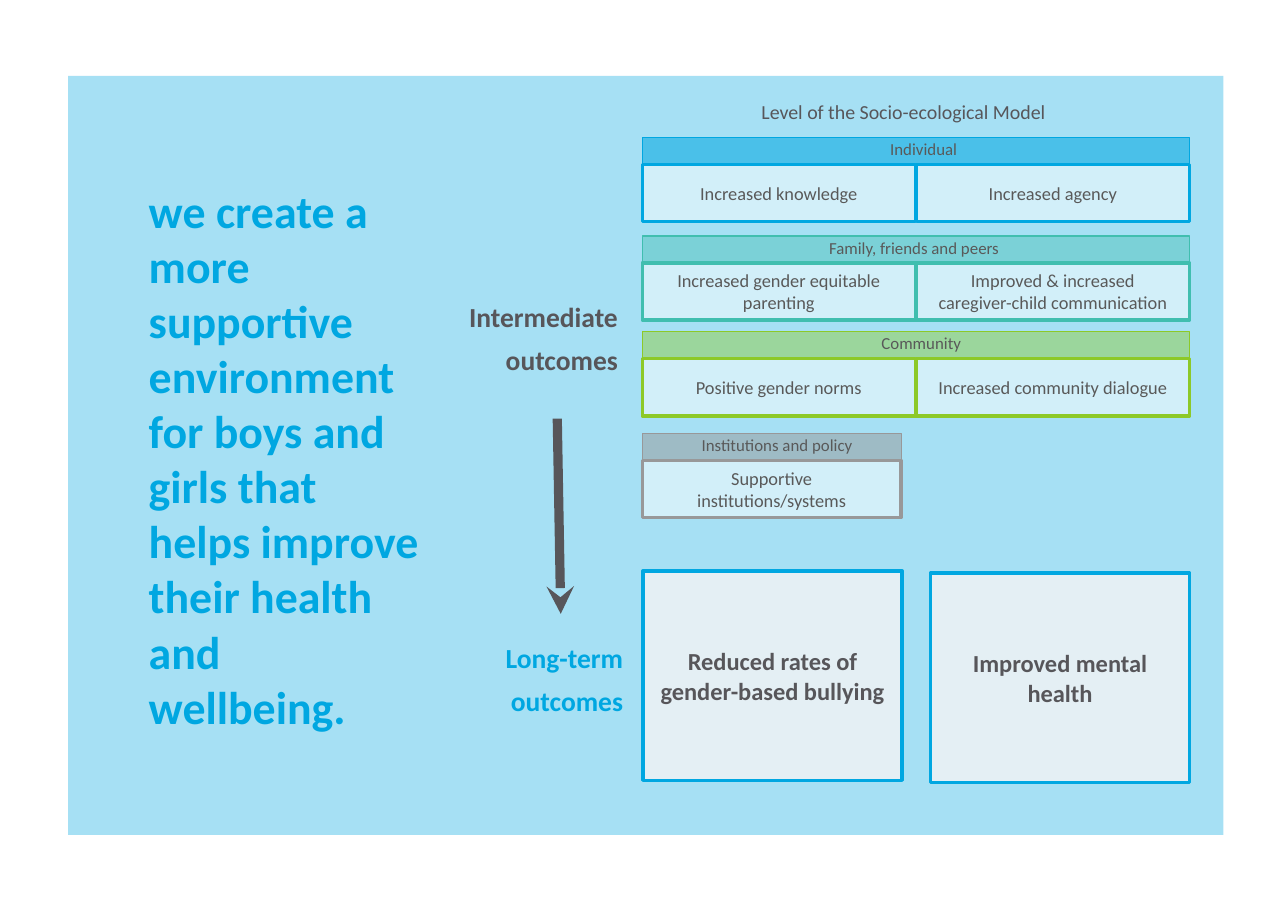
from dataclasses import dataclass

from lxml.etree import SubElement
from pptx import Presentation
from pptx.dml.color import RGBColor
from pptx.enum.shapes import MSO_CONNECTOR, MSO_SHAPE
from pptx.enum.text import MSO_ANCHOR, MSO_AUTO_SIZE, PP_ALIGN
from pptx.oxml.ns import qn
from pptx.util import Cm, Pt

COLORS = {
    "blue": "00A7E1",
    "teal": "40BEAF",
    "green": "8DC928",
    "grey": "989899",
    "dark": "57565A",
    "text": "595959",
    "white": "FFFFFF",
    "pale": "F1F3F4",
}

GRID_LEFT, GRID_WIDTH = 14.81, 12.62
HEADER_HEIGHT, CELL_HEIGHT = 0.64, 1.32
CELL_OFFSET, CELL_WIDTH, CELL_STEP = 0.62, 6.3, 6.32
NARROW_WIDTH = 5.97


@dataclass
class TextStyle:
    size: float
    color: str
    bold: bool = False
    align: PP_ALIGN = PP_ALIGN.CENTER
    anchor: MSO_ANCHOR = MSO_ANCHOR.MIDDLE
    spacing: float = 1.0
    inset: float = 0.28
    indent: float = 0


@dataclass
class Level:
    name: str
    color: str
    top: float
    alpha: int
    indent: float
    outcomes: tuple[str, ...]


@dataclass
class Label:
    text: str
    left: float
    top: float
    width: float
    height: float
    style: TextStyle


@dataclass
class LongTermBox:
    text: str
    left: float
    top: float


STATEMENT = Label(
    "we create a more supportive environment for boys and girls "
    "that helps improve their health and wellbeing.",
    3.15, 3.71, 6.83, 13.69, TextStyle(30, "blue", True, PP_ALIGN.LEFT))

LABELS = [
    Label("Level of the Socio-ecological Model", 17.15, 2.03, 8.2, 1.09,
          TextStyle(13, "dark", align=PP_ALIGN.LEFT, inset=0.41)),
] + [
    Label(text, left, top, 6.83, 2.36,
          TextStyle(18, color, True, PP_ALIGN.RIGHT, MSO_ANCHOR.TOP, 1.3, indent=1.45))
    for text, left, top, color in [
        ("Intermediate outcomes", 7.7, 6.4, "dark"),
        ("Long-term outcomes", 7.82, 14.27, "blue"),
    ]
]

LEVELS = [
    Level("Individual", "blue", 3.17, 55, 0.36,
          ("Increased knowledge", "Increased agency")),
    Level("Family, friends and peers", "teal", 5.44, 42, -0.08,
          ("Increased gender equitable parenting",
           "Improved & increased caregiver-child communication")),
    Level("Community", "green", 7.65, 43, 0.25,
          ("Positive gender norms", "Increased community dialogue")),
    Level("Institutions and policy", "grey", 9.99, 51, 0.25,
          ("Supportive institutions/systems",)),
]

LONG_TERM = [
    LongTermBox("Reduced rates of gender-based bullying", 14.83, 13.16),
    LongTermBox("Improved mental health", 21.46, 13.21),
]


def rgb(name: str) -> RGBColor:
    return RGBColor.from_string(COLORS[name])


def write(sp, text: str, style: TextStyle) -> None:
    tf = sp.text_frame
    frame_format = {
        "word_wrap": True,
        "auto_size": MSO_AUTO_SIZE.NONE,
        "vertical_anchor": style.anchor,
        "margin_left": Cm(style.inset + style.indent),
        "margin_right": Cm(style.inset),
        "margin_top": Cm(style.inset),
        "margin_bottom": Cm(style.inset),
    }
    p = tf.paragraphs[0]
    p.alignment, p.line_spacing = style.align, style.spacing
    r = p.add_run()
    r.text = text
    font_format = {"name": "Calibri", "size": Pt(style.size), "bold": style.bold}
    for target, values in ((tf, frame_format), (r.font, font_format)):
        for key, value in values.items():
            setattr(target, key, value)
    r.font.color.rgb = rgb(style.color)


def add_box(slide, left: float, top: float, width: float, height: float,
            fill: str, alpha: int, line: str = "", weight: float = 2.25):
    sp = slide.shapes.add_shape(
        MSO_SHAPE.RECTANGLE, Cm(left), Cm(top), Cm(width), Cm(height))
    sp.shadow.inherit = False
    sp.fill.solid()
    sp.fill.fore_color.rgb = rgb(fill)
    color = sp._element.spPr.find(qn("a:solidFill")).find(qn("a:srgbClr"))
    SubElement(color, qn("a:alpha"), val=str(alpha * 1000))
    if line:
        sp.line.color.rgb = rgb(line)
        sp.line.width = Pt(weight)
    else:
        sp.line.fill.background()
    return sp


def add_label(slide, label: Label) -> None:
    sp = slide.shapes.add_textbox(
        Cm(label.left), Cm(label.top), Cm(label.width), Cm(label.height))
    write(sp, label.text, label.style)


def add_level(slide, level: Level) -> None:
    single = len(level.outcomes) == 1
    for i, outcome in enumerate(level.outcomes):
        sp = add_box(slide, GRID_LEFT + i * CELL_STEP, level.top + CELL_OFFSET,
                     NARROW_WIDTH if single else CELL_WIDTH, CELL_HEIGHT,
                     "white", 50, level.color)
        write(sp, outcome, TextStyle(12, "text", inset=0.41))
    sp = add_box(slide, GRID_LEFT, level.top, NARROW_WIDTH if single else GRID_WIDTH,
                 HEADER_HEIGHT, level.color, level.alpha, level.color, 0.75)
    write(sp, level.name,
          TextStyle(11, "text", spacing=0.7, inset=0.36, indent=level.indent))


def add_arrow(slide) -> None:
    arrow = slide.shapes.add_connector(
        MSO_CONNECTOR.STRAIGHT, Cm(12.85), Cm(9.65), Cm(12.93), Cm(14.15))
    arrow.line.color.rgb = rgb("dark")
    arrow.line.width = Pt(6)
    sp_pr = arrow._element.spPr
    SubElement(sp_pr.find(qn("a:ln")), qn("a:tailEnd"), type="stealth")
    SubElement(sp_pr, qn("a:effectLst"))


def main() -> None:
    prs = Presentation()
    prs.slide_width, prs.slide_height = Cm(29.7), Cm(21)
    slide = prs.slides.add_slide(prs.slide_layouts[5])

    # Background panel, placed behind the title
    panel = add_box(slide, 1.57, 1.75, 26.64, 17.5, "blue", 35)
    title = slide.shapes.title
    title._element.addprevious(panel._element)

    # Statement
    for key in ("left", "top", "width", "height"):
        setattr(title, key, Cm(getattr(STATEMENT, key)))
    write(title, STATEMENT.text, STATEMENT.style)

    # Long-term outcomes
    for box in LONG_TERM:
        sp = add_box(slide, box.left, box.top, NARROW_WIDTH, 4.83, "pale", 83, "blue")
        write(sp, box.text, TextStyle(16, "dark", True, inset=0.25))

    # Arrow, labels and intermediate outcomes by level
    add_arrow(slide)
    for label in LABELS:
        add_label(slide, label)
    for level in LEVELS:
        add_level(slide, level)

    prs.save("out.pptx")


if __name__ == "__main__":
    main()
